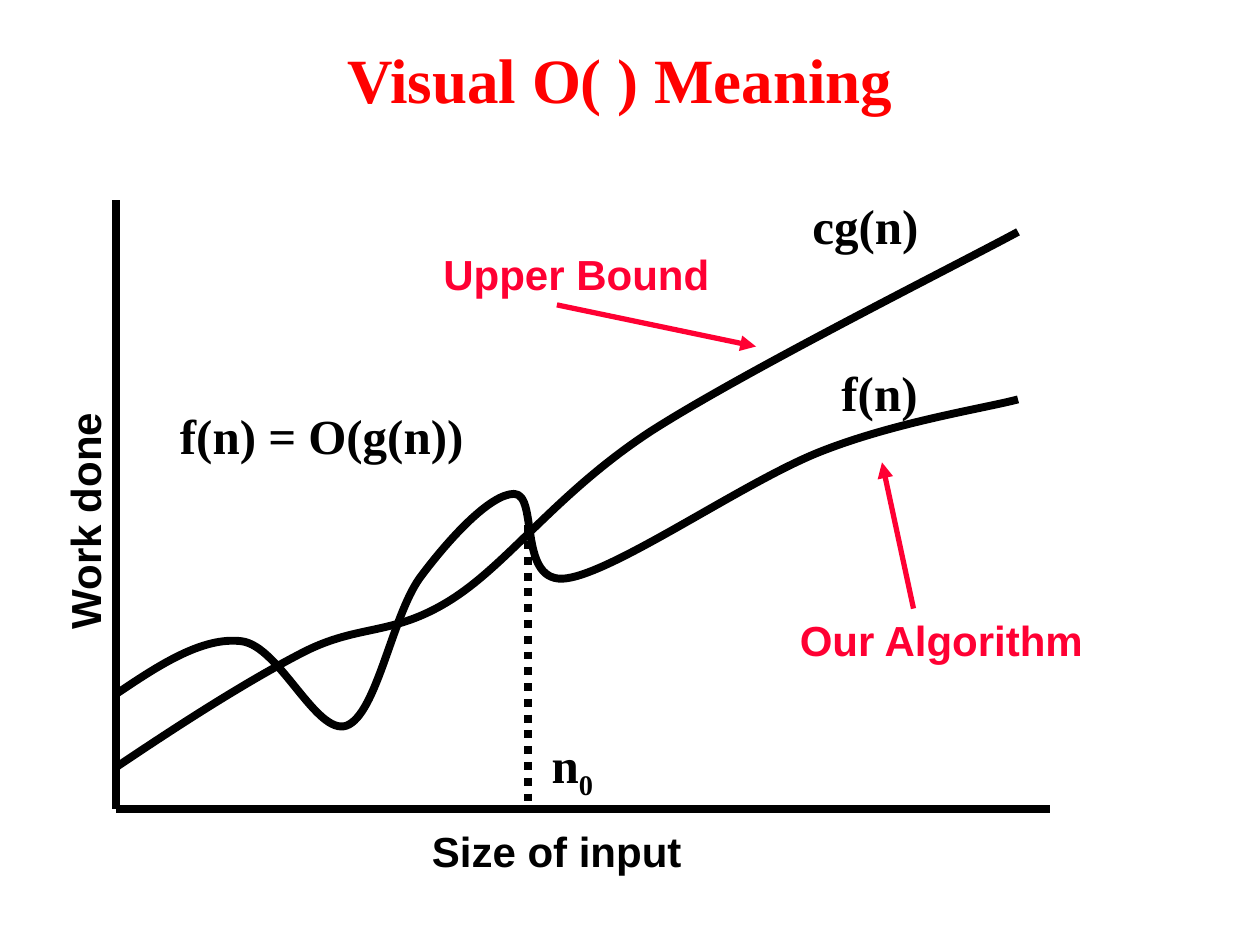
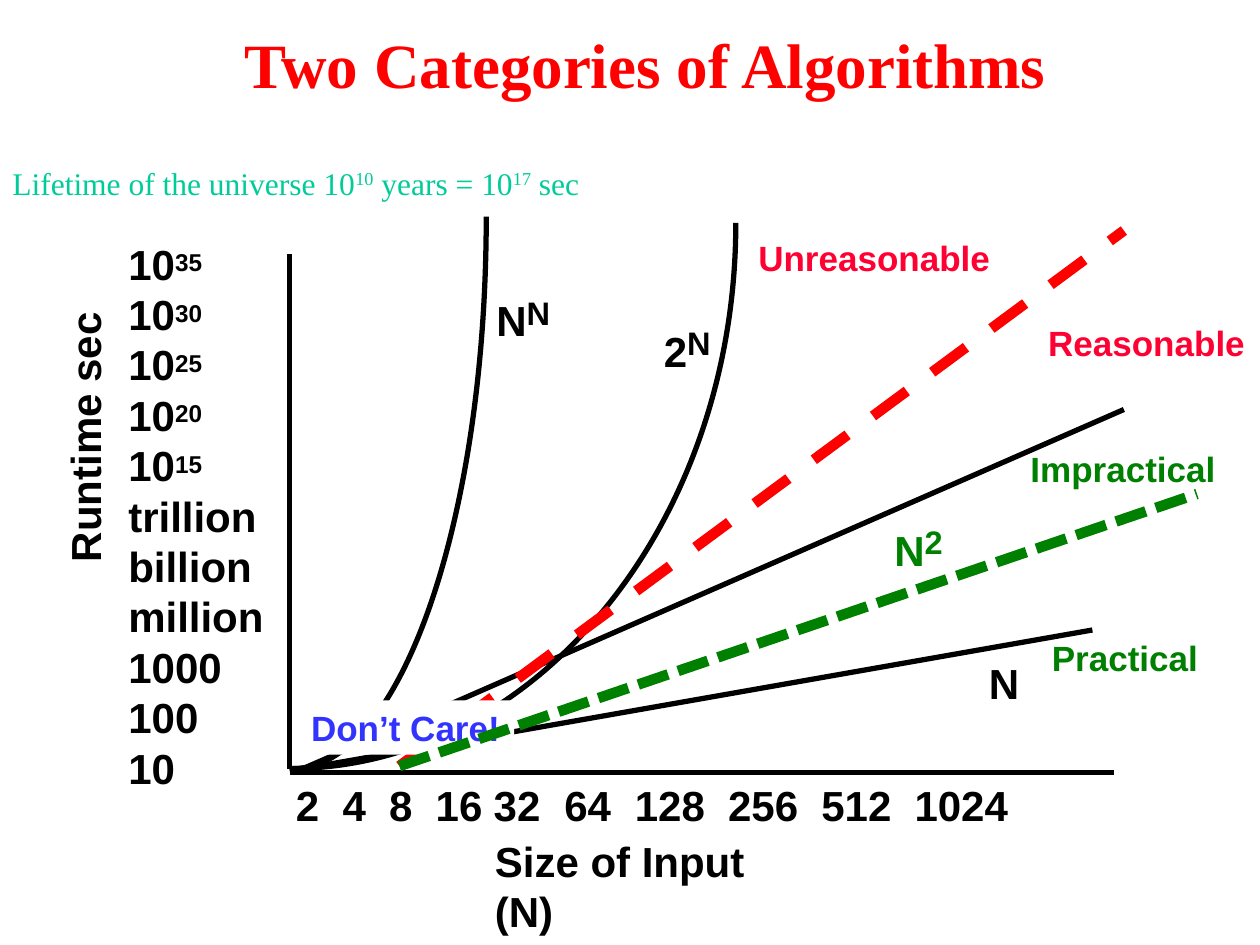
"""Build two slides on algorithm growth: the meaning of O( ) and runtime categories."""
from lxml import etree
from pptx import Presentation
from pptx.dml.color import RGBColor
from pptx.enum.dml import MSO_LINE
from pptx.enum.shapes import MSO_CONNECTOR, MSO_SHAPE
from pptx.enum.text import MSO_ANCHOR, MSO_AUTO_SIZE, PP_ALIGN
from pptx.oxml.ns import qn
from pptx.util import Inches, Pt

STRAIGHT, RECT = MSO_CONNECTOR.STRAIGHT, MSO_SHAPE.RECTANGLE
DASH, SHORT_DASH, DOTS = MSO_LINE.DASH, MSO_LINE.SQUARE_DOT, MSO_LINE.ROUND_DOT
TOP, MIDDLE = MSO_ANCHOR.TOP, MSO_ANCHOR.MIDDLE
CENTER, LEFT, NO_FIT = PP_ALIGN.CENTER, PP_ALIGN.LEFT, MSO_AUTO_SIZE.NONE

BLACK, WHITE, RED, CRIMSON = "000000", "FFFFFF", "FF0000", "FF0033"
GREEN, TEAL, BLUE = "008000", "00CC99", "3333FF"
SANS, SERIF = "Arial", "Times New Roman"

# Text styles: font, size, colour, bold
TITLE = (SERIF, 36, RED, True)
FORMULA = (SERIF, 28, BLACK, True)
AXIS = (SANS, 24, BLACK, True)
SQUARE = (SANS, 24, GREEN, True)
CALLOUT = (SANS, 24, CRIMSON, True)
LIMIT = (SANS, 20, CRIMSON, True)
USE = (SANS, 20, GREEN, True)
IGNORED = (SANS, 20, BLUE, True)
FACT = (SERIF, 18, TEAL, False)

# Lines: start, end, colour, width, dash, arrow
MEANING_LINES = [
    ((0.92, 1.59), (0.92, 6.42), BLACK, 4.5, None, False),
    ((0.92, 6.42), (8.33, 6.42), BLACK, 4.5, None, False),
    ((4.19, 4.17), (4.19, 6.42), BLACK, 4.5, DOTS, False),
    ((7.25, 4.83), (7, 3.67), CRIMSON, 3, None, True),
    ((4.42, 2.42), (6, 2.75), CRIMSON, 3, None, True),
]
CATEGORY_LINES = [
    ((2.3, 2.02), (2.3, 6.1), BLACK, 3, None, False),
    ((2.3, 6.13), (8.84, 6.13), BLACK, 3, None, False),
    ((2.3, 6.12), (8.67, 5), BLACK, 3, None, False),
    ((2.36, 6.12), (8.92, 3.25), BLACK, 3, None, False),
]
REASONABLE_LIMIT = ((3.17, 6.08), (8.92, 1.83), RED, 6, DASH, False)
PRACTICAL_LIMIT = ((3.17, 6.08), (9.5, 3.92), GREEN, 6, SHORT_DASH, False)

# Curves: a start, then two control points and an end for each Bezier piece
F_CURVE = [
    (0.92, 5.51), (1.26, 5.28), (1.61, 5.05), (1.92, 5.09),
    (2.22, 5.13), (2.51, 5.84), (2.75, 5.76),
    (2.99, 5.67), (3.11, 4.9), (3.33, 4.59),
    (3.56, 4.28), (3.89, 3.92), (4.08, 3.92),
    (4.28, 3.92), (4.1, 4.65), (4.5, 4.59),
    (4.9, 4.53), (5.9, 3.83), (6.5, 3.59),
    (7.1, 3.35), (7.82, 3.24), (8.08, 3.17),
]
CG_CURVE = [
    (0.92, 6.09), (1.44, 5.74), (1.97, 5.4), (2.42, 5.17),
    (2.86, 4.95), (3.12, 5.05), (3.58, 4.76),
    (4.04, 4.47), (4.42, 3.91), (5.17, 3.42),
    (5.92, 2.94), (7.6, 2.1), (8.08, 1.84),
]
TWO_TO_N = [(5.84, 1.77), (5.84, 4.16), (4.25, 6.1), (2.3, 6.1)]
N_TO_N = [(3.86, 1.72), (3.86, 4.14), (3.17, 6.1), (2.33, 6.1)]

# Labels: box, style, paragraphs of runs; a raised run is (text, percent, size)
MEANING_LABELS = [
    ((6.58, 2.83, 0.81, 0.57), FORMULA, [["f(n)"]]),
    ((6.35, 1.5, 1.04, 0.57), FORMULA, [["cg(n)"]]),
    ((4.28, 5.78, 0.55, 0.57), FORMULA, [["n", ("0", -25, 28)]]),
    ((1.33, 3.17, 2.45, 0.57), FORMULA, [["f(n) = O(g(n))"]]),
    ((3.33, 6.5, 2.18, 0.5), AXIS, [["Size of input"]]),
    ((6.25, 4.83, 2.46, 0.5), CALLOUT, [["Our Algorithm"]]),
    ((3.42, 1.92, 2.31, 0.5), CALLOUT, [["Upper Bound"]]),
]
POWERS = ["35", "30", "25", "20", "15"]
AMOUNTS = ["trillion", "billion", "million", "1000", "100", "10"]
RUNTIMES = [["10", (power, 20, 24)] for power in POWERS] + [[a] for a in AMOUNTS]
CATEGORY_LABELS = [
    ((0.92, 1.84, 1.28, 4.49), AXIS, RUNTIMES),
    ((7.75, 5.17, 0.44, 0.5), AXIS, [["N"]]),
    ((7, 4, 0.61, 0.51), SQUARE, [["N", ("2", 20, 32)]]),
    ((5.17, 2.42, 0.6, 0.5), AXIS, [["2", ("N", 20, 32)]]),
    ((3.84, 2.18, 0.65, 0.5), AXIS, [["N", ("N", 20, 32)]]),
    ((8.22, 2.5, 1.78, 0.44), LIMIT, [["Reasonable"]]),
    ((5.92, 1.83, 2.06, 0.44), LIMIT, [["Unreasonable"]]),
    ((8.25, 5, 1.37, 0.44), USE, [["Practical"]]),
    ((8.08, 3.5, 1.68, 0.44), USE, [["Impractical"]]),
    ((0, 1.25, 4.81, 0.4), FACT, [["Lifetime of the universe 10", ("10", 30, 18),
                                   " years = 10", ("17", 30, 18), " sec"]]),
]
INPUT_SIZES = {"2": 0, "4": 0.37, "8": 0.74, "16": 1.11, "32": 1.57, "64": 2.13,
               "128": 2.69, "256": 3.43, "512": 4.17, "1024": 4.91}


def rgb(color):
    return RGBColor.from_string(color)


def inches(values):
    return [Inches(v) for v in values]


def style_paragraph(p, style):
    name, size, color, bold = style
    p.font.name, p.font.size, p.font.bold = name, Pt(size), bold
    p.font.color.rgb = rgb(color)


def write(sp, style, paragraphs, wrap=False):
    tf = sp.text_frame
    tf.word_wrap, tf.vertical_anchor = wrap, TOP
    for i, runs in enumerate(paragraphs):
        p = tf.add_paragraph() if i else tf.paragraphs[0]
        p.alignment = LEFT
        style_paragraph(p, style)
        for run in runs:
            r = p.add_run()
            if isinstance(run, str):
                r.text = run
            else:
                r.text, percent, size = run
                r.font.size = Pt(size)
                r._r.get_or_add_rPr().set("baseline", str(percent * 1000))


def add_label(s, box, style, paragraphs, wrap=False, rotation=0):
    sp = s.shapes.add_textbox(*inches(box))
    sp.rotation = rotation
    write(sp, style, paragraphs, wrap)
    return sp


def add_line(s, start, end, color, width, dash, arrow):
    sp = s.shapes.add_connector(STRAIGHT, *inches(start + end))
    sp.line.color.rgb, sp.line.width = rgb(color), Pt(width)
    if dash:
        sp.line.dash_style = dash
    if arrow:
        etree.SubElement(sp.line._get_or_add_ln(), qn("a:tailEnd"), type="triangle")
    etree.SubElement(sp._element.spPr, qn("a:effectLst"))


def add_curve(s, knots, width):
    builder = s.shapes.build_freeform(*inches(knots[0]))
    builder.add_line_segments([inches(k) for k in knots[1:]], close=False)
    sp = builder.convert_to_shape()
    segments = list(sp._element.iter(qn("a:lnTo")))
    outline = segments[0].getparent()
    for i in range(0, len(segments), 3):
        piece = etree.SubElement(outline, qn("a:cubicBezTo"))
        for segment in segments[i:i + 3]:
            piece.append(segment[0])
            outline.remove(segment)
    sp.shadow.inherit = False
    sp.fill.background()
    sp.line.color.rgb, sp.line.width = rgb(BLACK), Pt(width)


def add_slide(prs, title, box, anchor):
    s = prs.slides.add_slide(prs.slide_layouts[5])
    sp = s.shapes.title
    sp.left, sp.top, sp.width, sp.height = inches(box)
    tf = sp.text_frame
    tf.text, tf.auto_size, tf.vertical_anchor = title, NO_FIT, anchor
    tf.margin_top = tf.margin_bottom = Inches(0.03)
    p = tf.paragraphs[0]
    p.alignment = CENTER
    style_paragraph(p, TITLE)
    return s


def add_input_sizes(s):
    sp = add_label(s, (2.25, 6.14, 5.85, 0.5), AXIS, [["\t".join(INPUT_SIZES)]])
    tabs = etree.Element(qn("a:tabLst"))
    for position in list(INPUT_SIZES.values())[1:]:
        etree.SubElement(tabs, qn("a:tab"), pos=str(Inches(position)), algn="l")
    sp.text_frame.paragraphs[0]._p.get_or_add_pPr().insert(0, tabs)


def add_ignored_zone(s):
    sp = s.shapes.add_shape(RECT, *inches((2.37, 5.56, 1.71, 0.43)))
    sp.shadow.inherit = False
    sp.fill.solid()
    sp.fill.fore_color.rgb = rgb(WHITE)
    sp.line.fill.background()
    write(sp, IGNORED, [["Don’t Care!"]])


def build_meaning(prs):
    s = add_slide(prs, "Visual O( ) Meaning", (0.67, 0, 8.5, 1.25), MIDDLE)
    for line in MEANING_LINES:
        add_line(s, *line)
    for curve in (F_CURVE, CG_CURVE):
        add_curve(s, curve, 4.5)
    for label in MEANING_LABELS:
        add_label(s, *label)
    add_label(s, (-0.29, 3.88, 1.92, 0.5), AXIS, [["Work done"]], rotation=270)


def build_categories(prs):
    s = add_slide(prs, "Two Categories of Algorithms", (1.31, 0.17, 7.62, 0.79), TOP)
    for line in CATEGORY_LINES:
        add_line(s, *line)
    for curve in (TWO_TO_N, N_TO_N):
        add_curve(s, curve, 3)
    add_line(s, *REASONABLE_LIMIT)
    add_ignored_zone(s)
    add_line(s, *PRACTICAL_LIMIT)
    for label in CATEGORY_LABELS:
        add_label(s, *label)
    add_input_sizes(s)
    add_label(s, (3.83, 6.58, 2.7, 0.5), AXIS, [["Size of Input (N)"]], wrap=True)
    add_label(s, (-0.42, 3.22, 2.18, 0.5), AXIS, [["Runtime sec"]], rotation=270)


def main():
    prs = Presentation()
    prs.slide_width, prs.slide_height = Inches(10), Inches(7.5)
    build_meaning(prs)
    build_categories(prs)
    prs.save("out.pptx")


if __name__ == "__main__":
    main()
